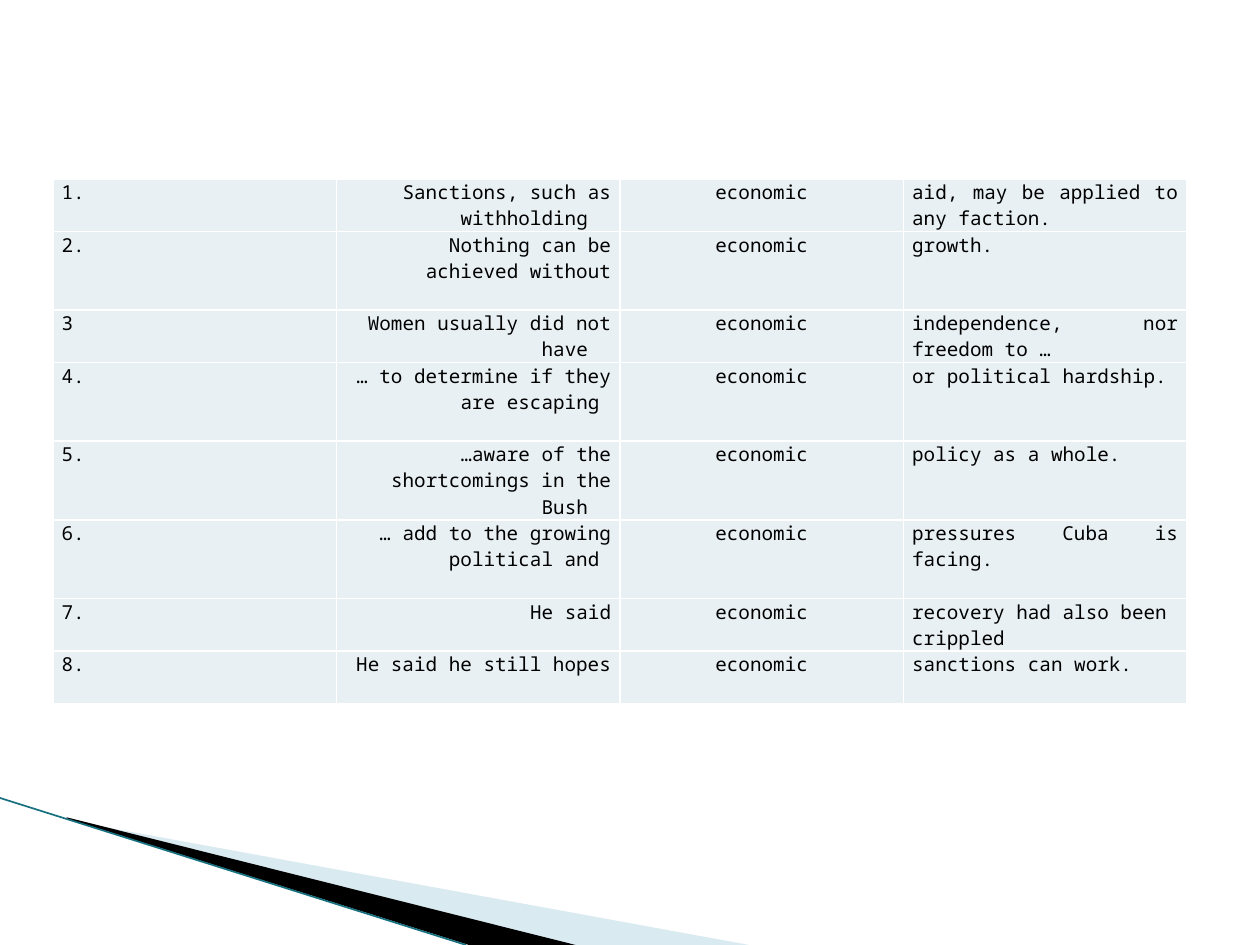
from lxml.etree import SubElement
from pptx import Presentation
from pptx.dml.color import RGBColor
from pptx.enum.shapes import MSO_CONNECTOR
from pptx.enum.text import PP_ALIGN as ALIGN
from pptx.oxml import parse_xml
from pptx.oxml.ns import nsdecls, qn
from pptx.util import Pt

COLORS = {"cell": "E8F0F4", "border": "FFFFFF", "text": "000000",
          "pale": "A0CBDC", "dark": "000000", "edge": "16707F"}
FONT = {"name": "Noto Sans Mono", "size": Pt(11)}
MARGINS = {"margin_left": Pt(5), "margin_right": Pt(5),
           "margin_top": 0, "margin_bottom": 0}
LINE_HEIGHT = 14.97
KEYWORD = "economic"

# number, left context, right context, height in lines, alignment of right context
CONCORDANCE = [
    ("1.", "Sanctions, such as withholding  ", "aid, may be applied to any faction.", 2, ALIGN.JUSTIFY),
    ("2.", "Nothing can be achieved without", "growth.", 3, ALIGN.JUSTIFY),
    ("3", "Women usually did not have  ", "independence, nor freedom to …", 2, ALIGN.JUSTIFY),
    ("4.", "… to determine if they are escaping ", "or political hardship.", 3, ALIGN.JUSTIFY),
    ("5.", "…aware of the shortcomings in the Bush  ", "policy as a whole.", 3, ALIGN.JUSTIFY),
    ("6.", "… add to the growing political and ", "pressures Cuba is facing.", 3, ALIGN.JUSTIFY),
    ("7.", "He said", "recovery had also been crippled", 2, ALIGN.LEFT),
    ("8.", "He said he still hopes", "sanctions can work.", 2, ALIGN.JUSTIFY),
]


def rgb(name):
    return RGBColor.from_string(COLORS[name])


def set_values(target, values):
    for name, value in values.items():
        setattr(target, name, value)


def add_borders(cell):
    properties = cell._tc.get_or_add_tcPr()
    for side in ("lnL", "lnR", "lnT", "lnB"):
        properties.append(parse_xml(
            f'<a:{side} {nsdecls("a")} w="{Pt(1)}"><a:solidFill>'
            f'<a:srgbClr val="{COLORS["border"]}"/></a:solidFill></a:{side}>'))


def fill_cell(cell, text, alignment):
    set_values(cell, MARGINS)
    add_borders(cell)
    cell.fill.solid()
    cell.fill.fore_color.rgb = rgb("cell")
    paragraph = cell.text_frame.paragraphs[0]
    paragraph.alignment = alignment
    run = paragraph.add_run()
    run.text = text
    set_values(run.font, FONT)
    run.font.color.rgb = rgb("text")


def add_concordance(slide, left, top, width):
    height = LINE_HEIGHT * sum(row[3] for row in CONCORDANCE)
    table = slide.shapes.add_table(len(CONCORDANCE), 4, Pt(left), Pt(top),
                                   Pt(width), Pt(height)).table
    set_values(table, {"first_row": False, "horz_banding": False})
    for column in table.columns:
        column.width = Pt(width / 4)
    for row, (number, before, after, lines, alignment) in zip(table.rows, CONCORDANCE):
        row.height = Pt(lines * LINE_HEIGHT)
        texts = (number, before, KEYWORD, after)
        alignments = (ALIGN.LEFT, ALIGN.RIGHT, ALIGN.CENTER, alignment)
        for cell, text, align in zip(row.cells, texts, alignments):
            fill_cell(cell, text, align)


def add_wedge(slide, points, color, opacity=100):
    """Add a filled outline without a line; opacity is in percent."""
    builder = slide.shapes.build_freeform(*points[0], scale=Pt(1))
    builder.add_line_segments(points[1:], close=True)
    shape = builder.convert_to_shape()
    shape.shadow.inherit = False
    shape.fill.solid()
    shape.fill.fore_color.rgb = rgb(color)
    shape.line.fill.background()
    if opacity < 100:
        color_element = shape._element.spPr.find(qn("a:solidFill"))[0]
        SubElement(color_element, qn("a:alpha"), val=str(opacity * 1000))


def add_corner(slide, left, top, bottom):
    """Draw the wedges that fan out from the left edge to the bottom."""
    add_wedge(slide, [(left + 39.6, top + 12.7), (left + 428.4, bottom),
                      (left + 328.3, bottom), (left + 39.6, top + 12)], "pale", 40)
    add_wedge(slide, [(left + 38.2, top + 11.3), (left + 329, bottom),
                      (left + 267.8, bottom), (left + 38.9, top + 12)], "dark")
    edge = slide.shapes.add_connector(MSO_CONNECTOR.STRAIGHT, Pt(left), Pt(top),
                                      Pt(left + 266.4), Pt(bottom))
    edge.line.color.rgb = rgb("edge")
    edge.line.width = Pt(0.95)
    SubElement(edge._element.spPr, qn("a:effectLst"))


def main():
    presentation = Presentation()
    set_values(presentation, {"slide_width": Pt(720), "slide_height": Pt(540)})
    slide = presentation.slides.add_slide(presentation.slide_layouts[6])
    add_corner(slide, left=0, top=456, bottom=540)
    add_concordance(slide, left=30.24, top=102.24, width=648)
    presentation.save("out.pptx")


if __name__ == "__main__":
    main()
